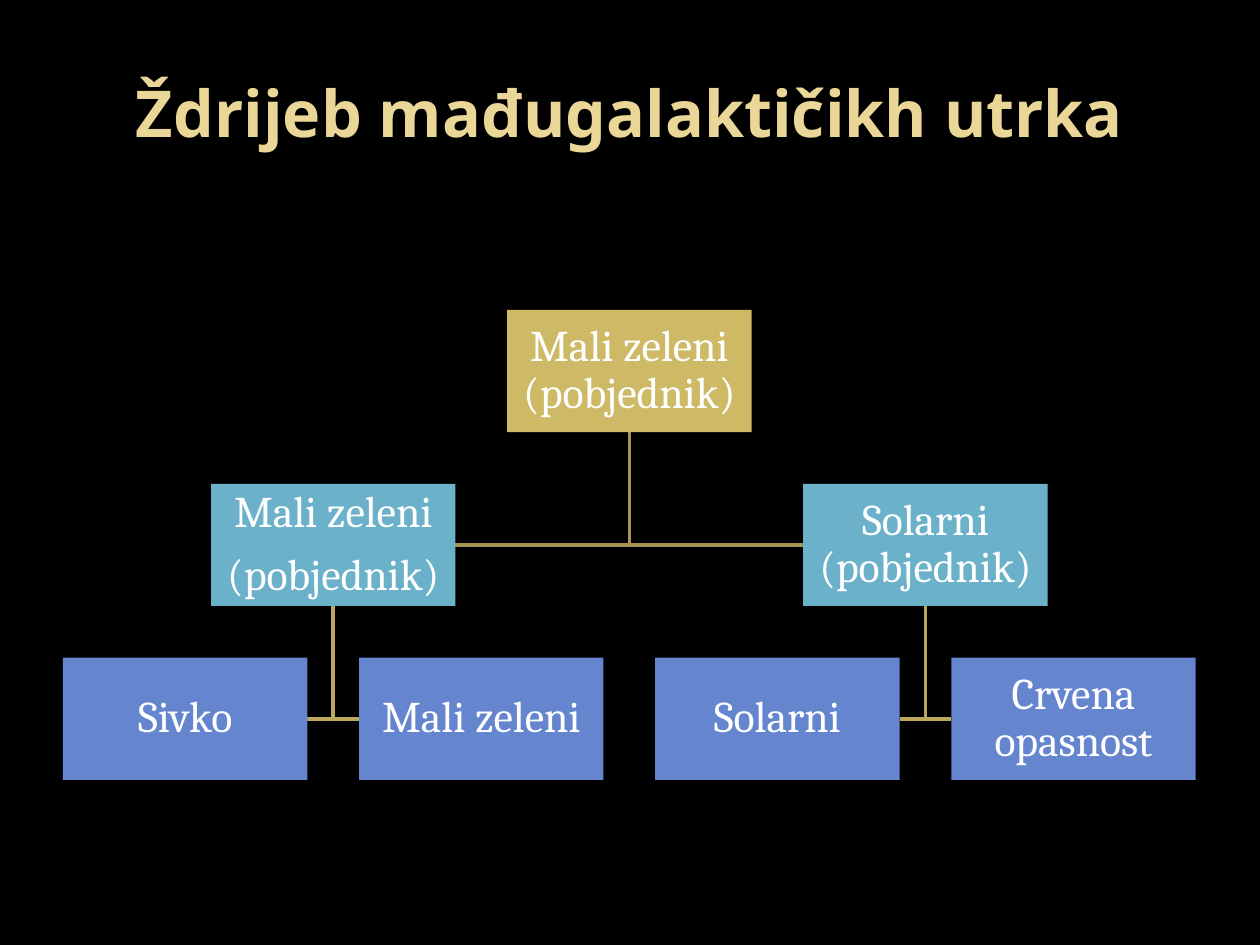
from dataclasses import dataclass

from pptx import Presentation
from pptx.dml.color import RGBColor
from pptx.enum.shapes import MSO_SHAPE
from pptx.enum.text import MSO_ANCHOR, MSO_AUTO_SIZE, PP_ALIGN
from pptx.util import Inches, Pt

RECTANGLE = MSO_SHAPE.RECTANGLE
MIDDLE = MSO_ANCHOR.MIDDLE
NO_AUTOFIT = MSO_AUTO_SIZE.NONE
CENTER = PP_ALIGN.CENTER
TITLE_ONLY = 5


@dataclass(frozen=True)
class Theme:
    background: str = "000000"
    title: str = "EAD696"
    text: str = "FFFFFF"
    levels: tuple = ("CEB966", "6BB1C9", "6585CF")
    links: tuple = ("A59452", "BBA85D")
    title_font: str = "Noto Sans"
    text_font: str = "Cambria"
    title_size: float = 36.9
    text_size: float = 25
    link_width: float = 2


@dataclass(frozen=True)
class Grid:
    """Bracket grid in inches; half columns centre a box over two others."""
    left: float = 0.5
    top: float = 2.46
    column_step: float = 2.35
    row_step: float = 1.38
    width: float = 1.94
    height: float = 0.97

    def corner(self, column, row):
        return self.left + column * self.column_step, self.top + row * self.row_step


THEME = Theme()
GRID = Grid()

# Each team: column, row, paragraphs
FINAL = (1.5, 0, ["Mali zeleni (pobjednik)"])
LEFT_SEMIFINAL = (0.5, 1, ["Mali zeleni", "(pobjednik)"])
RIGHT_SEMIFINAL = (2.5, 1, ["Solarni (pobjednik)"])
FIRST_ROUND = [
    (0, 2, ["Sivko"]),
    (1, 2, ["Mali zeleni"]),
    (2, 2, ["Solarni"]),
    (3, 2, ["Crvena opasnost"]),
]
MATCHES = [
    (FINAL, [LEFT_SEMIFINAL, RIGHT_SEMIFINAL]),
    (LEFT_SEMIFINAL, FIRST_ROUND[:2]),
    (RIGHT_SEMIFINAL, FIRST_ROUND[2:]),
]
TEAMS = [FINAL, LEFT_SEMIFINAL, RIGHT_SEMIFINAL, *FIRST_ROUND]


def color(value):
    return RGBColor.from_string(value)


def add_span(para, text, font, size, fill, bold=False):
    para.alignment = CENTER
    span = para.add_run()
    span.text = text
    span.font.name = font
    span.font.size = Pt(size)
    span.font.bold = bold
    span.font.color.rgb = color(fill)


def set_title(page, text):
    title = page.shapes.title
    title.left, title.top = Inches(0.5), Inches(0.3)
    title.width, title.height = Inches(9), Inches(1.18)
    frame = title.text_frame
    frame.auto_size = NO_AUTOFIT
    frame.vertical_anchor = MIDDLE
    add_span(frame.paragraphs[0], text, THEME.title_font, THEME.title_size,
             THEME.title, bold=True)


def add_link(page, winner, player):
    """Draw an elbow from the winner's bottom to the player's inner side."""
    winner_left, winner_top = GRID.corner(*winner[:2])
    player_left, player_top = GRID.corner(*player[:2])
    stem = winner_left + GRID.width / 2
    level = player_top + GRID.height / 2
    side = player_left if player_left > winner_left else player_left + GRID.width

    builder = page.shapes.build_freeform(
        Inches(stem), Inches(winner_top + GRID.height))
    builder.add_line_segments(
        [(Inches(stem), Inches(level)), (Inches(side), Inches(level))], close=False)
    link = builder.convert_to_shape()
    link.shadow.inherit = False
    link.fill.background()
    link.line.color.rgb = color(THEME.links[winner[1]])
    link.line.width = Pt(THEME.link_width)


def add_team(page, column, row, lines):
    left, top = GRID.corner(column, row)
    box = page.shapes.add_shape(RECTANGLE, Inches(left), Inches(top),
                                Inches(GRID.width), Inches(GRID.height))
    box.shadow.inherit = False
    box.fill.solid()
    box.fill.fore_color.rgb = color(THEME.levels[row])
    box.line.fill.background()

    frame = box.text_frame
    frame.word_wrap = True
    frame.vertical_anchor = MIDDLE
    frame.margin_left = frame.margin_right = Inches(0.02)
    frame.margin_top = frame.margin_bottom = Inches(0.02)
    for index, line in enumerate(lines):
        para = frame.add_paragraph() if index else frame.paragraphs[0]
        para.line_spacing = 0.9
        para.space_after = Pt(9)
        add_span(para, line, THEME.text_font, THEME.text_size, THEME.text)


def main():
    deck = Presentation()
    deck.slide_width, deck.slide_height = Inches(10), Inches(7.5)
    page = deck.slides.add_slide(deck.slide_layouts[TITLE_ONLY])
    page.background.fill.solid()
    page.background.fill.fore_color.rgb = color(THEME.background)

    set_title(page, "Ždrijeb mađugalaktičikh utrka")
    for winner, players in MATCHES:
        for player in players:
            add_link(page, winner, player)
    for team in TEAMS:
        add_team(page, *team)
    deck.save("out.pptx")


if __name__ == "__main__":
    main()
